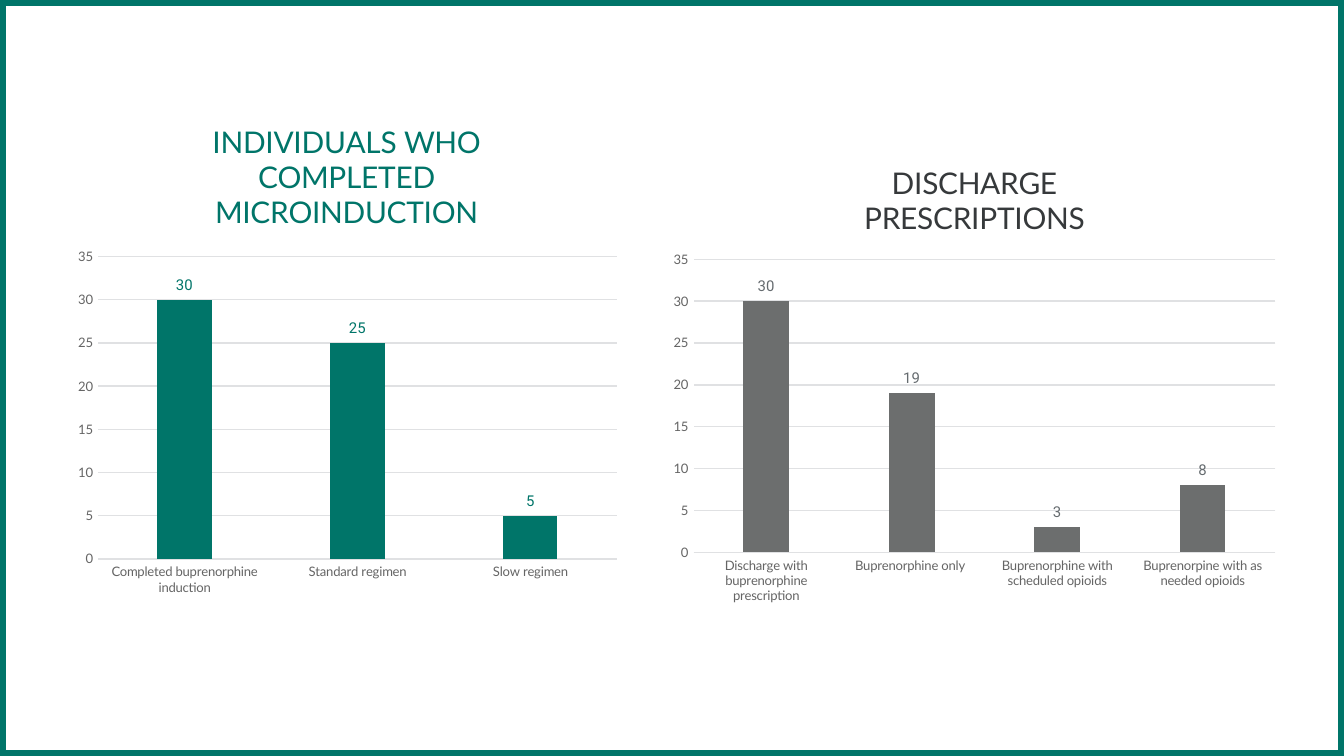
from dataclasses import dataclass

from lxml import etree
from pptx import Presentation
from pptx.chart.data import CategoryChartData as ChartData
from pptx.dml.color import RGBColor
from pptx.enum.chart import XL_CHART_TYPE as ChartType
from pptx.enum.chart import XL_LABEL_POSITION as LabelPosition
from pptx.enum.chart import XL_TICK_MARK as TickMark
from pptx.enum.shapes import MSO_SHAPE as Shape
from pptx.oxml.ns import qn
from pptx.util import Inches, Pt

COLORS = {
    "teal": "007569",
    "dark": "36393B",
    "gray": "6C6E6E",
    "label": "656B6F",
    "axis": "656565",
    "grid": "E0E1E3",
    "white": "FFFFFF",
}


@dataclass
class Box:
    left: float
    top: float
    width: float
    height: float


@dataclass
class BarChart:
    frame: Box
    plot: Box
    title_left: float
    title_top: float
    title: str
    title_color: str
    bar_color: str
    label_color: str
    bars: dict[str, int]


CHARTS = [
    BarChart(
        Box(0.5, 0.73, 4.17, 3.77), Box(0.73, 1.91, 3.86, 2.25), 1.55, 0.87,
        "INDIVIDUALS WHO\nCOMPLETED\nMICROINDUCTION",
        "teal", "teal", "teal",
        {"Completed buprenorphine induction": 30, "Standard regimen": 25,
         "Slow regimen": 5},
    ),
    BarChart(
        Box(4.92, 1.06, 4.67, 3.5), Box(5.16, 1.93, 4.33, 2.18), 6.4, 1.18,
        "DISCHARGE\nPRESCRIPTIONS",
        "dark", "gray", "label",
        {"Discharge with buprenorphine prescription": 30,
         "Buprenorphine only ": 19,
         "Buprenorphine with scheduled opioids": 3,
         "Buprenorpine with as needed opioids": 8},
    ),
]


def rgb(name: str) -> RGBColor:
    return RGBColor.from_string(COLORS[name])


def style_font(font, name: str, size: float, color: str) -> None:
    font.name = name
    font.size = Pt(size)
    font.bold = False
    font.color.rgb = rgb(color)


def style_line(line, color: str) -> None:
    line.color.rgb = rgb(color)
    line.width = Pt(0.75)


def make_layout(values: dict[str, object]):
    """Build a manual chart layout from its ordered settings."""
    layout = etree.Element(qn("c:layout"))
    manual = etree.SubElement(layout, qn("c:manualLayout"))
    for tag, value in values.items():
        etree.SubElement(manual, qn(f"c:{tag}")).set("val", str(value))
    return layout


def place_parts(chart, item: BarChart) -> None:
    """Fix the title and the inner plot area, given in slide inches."""
    frame, plot = item.frame, item.plot

    def share(left: float, top: float) -> dict[str, object]:
        return {"xMode": "edge", "yMode": "edge",
                "x": (left - frame.left) / frame.width,
                "y": (top - frame.top) / frame.height}

    title = chart.chart_title._element
    area = chart._chartSpace.find(f".//{qn('c:plotArea')}")
    for parent in (title, area):
        for old in parent.findall(qn("c:layout")):
            parent.remove(old)
    title.find(qn("c:tx")).addnext(
        make_layout(share(item.title_left, item.title_top)))
    area.insert(0, make_layout({
        "layoutTarget": "inner",
        **share(plot.left, plot.top),
        "w": plot.width / frame.width,
        "h": plot.height / frame.height,
    }))


def draw_chart(page, item: BarChart) -> None:
    data = ChartData()
    data.categories = list(item.bars)
    data.add_series("Series 1", list(item.bars.values()))
    frame = item.frame
    chart = page.shapes.add_chart(
        ChartType.COLUMN_CLUSTERED, Inches(frame.left), Inches(frame.top),
        Inches(frame.width), Inches(frame.height), data).chart
    style_font(chart.font, "Roboto", 10, "dark")
    chart.has_legend = False

    # Title
    chart.has_title = True
    text = chart.chart_title.text_frame
    text.text = item.title
    for para in text.paragraphs:
        style_font(para.font, "Lato", 16, item.title_color)
        for span in para.runs:
            style_font(span.font, "Lato", 16, item.title_color)
    chart.chart_title.include_in_layout = False

    # Axes
    for axis in (chart.category_axis, chart.value_axis):
        axis.major_tick_mark = axis.minor_tick_mark = TickMark.NONE
        style_font(axis.tick_labels.font, "Lato", 7, "axis")
    style_line(chart.category_axis.format.line, "grid")
    values = chart.value_axis
    values.minimum_scale, values.maximum_scale, values.major_unit = 0, 35, 5
    values.format.line.fill.background()
    style_line(values.major_gridlines.format.line, "grid")

    # Bars and their values
    plot = chart.plots[0]
    plot.vary_by_categories = False
    plot.gap_width, plot.overlap = 219, -27
    series = plot.series[0]
    series.format.fill.solid()
    series.format.fill.fore_color.rgb = rgb(item.bar_color)
    labels = series.data_labels
    labels.show_value = True
    labels.position = LabelPosition.OUTSIDE_END
    style_font(labels.font, "Roboto", 8, item.label_color)
    place_parts(chart, item)


def main() -> None:
    deck = Presentation()
    # Widescreen page, 16 to 9
    deck.slide_width = Inches(10)
    deck.slide_height = deck.slide_width * 9 // 16
    page = deck.slides.add_slide(deck.slide_layouts[6])
    page.background.fill.solid()
    page.background.fill.fore_color.rgb = rgb("white")

    # Border around the page
    border = page.shapes.add_shape(
        Shape.RECTANGLE, 0, 0, deck.slide_width, deck.slide_height)
    border.shadow.inherit = False
    border.fill.background()
    border.line.color.rgb = rgb("teal")
    border.line.width = Pt(6)

    for item in CHARTS:
        draw_chart(page, item)
    deck.save("out.pptx")


if __name__ == "__main__":
    main()
